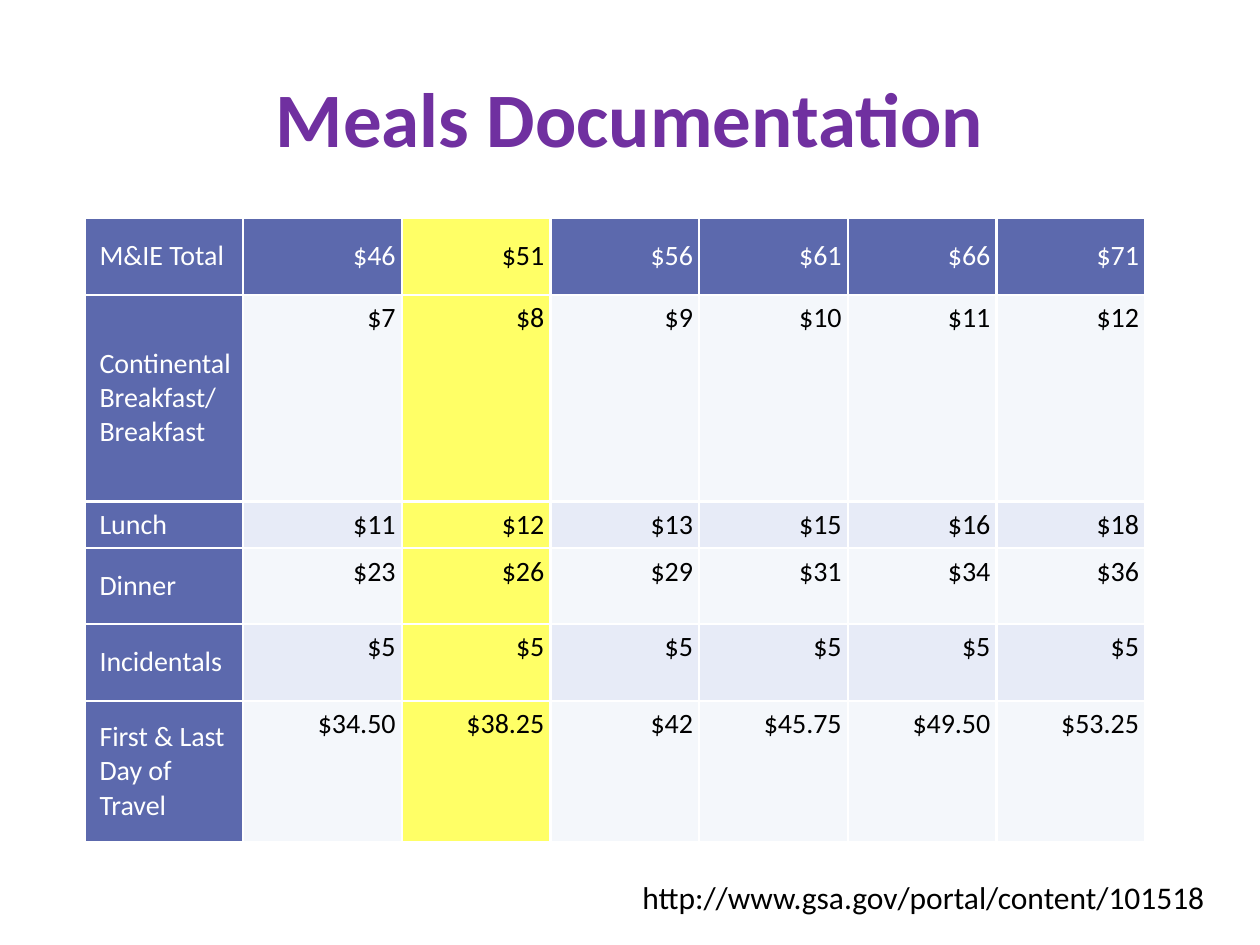
from lxml.etree import SubElement
from pptx import Presentation
from pptx.dml.color import RGBColor
from pptx.enum.text import MSO_ANCHOR, PP_ALIGN
from pptx.oxml.ns import qn
from pptx.util import Inches, Pt

COLORS = {
    "title": "7030A0",
    "header": "5C69AD",
    "highlight": "FFFF66",
    "light_band": "F4F7FB",
    "dark_band": "E7EBF7",
    "white": "FFFFFF",
    "black": "000000",
}
RATES = [
    ("M&IE Total", "$46", "$51", "$56", "$61", "$66", "$71"),
    ("Continental Breakfast/ Breakfast", "$7", "$8", "$9", "$10", "$11", "$12"),
    ("Lunch", "$11", "$12", "$13", "$15", "$16", "$18"),
    ("Dinner", "$23", "$26", "$29", "$31", "$34", "$36"),
    ("Incidentals", "$5", "$5", "$5", "$5", "$5", "$5"),
    ("First & Last Day of Travel", "$34.50", "$38.25", "$42", "$45.75", "$49.50", "$53.25"),
]
COLUMN_WIDTHS = [1.26] * 2 + [1.18] * 5
ROW_HEIGHTS = [0.61, 1.64, 0.36, 0.6, 0.61, 1.12]
HIGHLIGHT_COLUMN = 2


def rgb(name):
    return RGBColor.from_string(COLORS[name])


def format_text(paragraph, size, color, align, bold=False):
    paragraph.alignment = align
    font = paragraph.font
    font.name, font.size, font.bold = "Calibri", Pt(size), bold
    font.color.rgb = rgb(color)


def add_borders(cell, color, width):
    properties = cell._tc.get_or_add_tcPr()
    for position, side in enumerate(("lnL", "lnR", "lnT", "lnB")):
        line = SubElement(properties, qn(f"a:{side}"), w=str(Pt(width)))
        fill = SubElement(line, qn("a:solidFill"))
        SubElement(fill, qn("a:srgbClr"), val=COLORS[color])
        properties.insert(position, line)


def cell_colors(row, column):
    if column == HIGHLIGHT_COLUMN:
        return "highlight", "black"
    if row == 0 or column == 0:
        return "header", "white"
    return ("light_band" if row % 2 else "dark_band"), "black"


def place_title(slide, left, top, width, height):
    title = slide.shapes.title
    title.left, title.top, title.width, title.height = left, top, width, height
    title.text_frame.text = "Meals Documentation"
    title.text_frame.vertical_anchor = MSO_ANCHOR.MIDDLE
    format_text(title.text_frame.paragraphs[0], 44, "title", PP_ALIGN.CENTER, bold=True)


def place_rates(slide, left, top, width, height):
    rates = slide.shapes.add_table(len(RATES), len(RATES[0]), left, top, width, height).table
    for column, column_width in zip(rates.columns, COLUMN_WIDTHS):
        column.width = Inches(column_width)
    for row, row_height in zip(rates.rows, ROW_HEIGHTS):
        row.height = Inches(row_height)
    for r, values in enumerate(RATES):
        for c, value in enumerate(values):
            cell = rates.cell(r, c)
            heading = r == 0 or c == 0
            fill, ink = cell_colors(r, c)
            cell.text = value
            cell.margin_left = Inches(0.12 if heading else 0.09)
            cell.margin_right = cell.margin_top = cell.margin_bottom = Inches(0.05)
            cell.vertical_anchor = MSO_ANCHOR.MIDDLE if heading else MSO_ANCHOR.TOP
            cell.fill.solid()
            cell.fill.fore_color.rgb = rgb(fill)
            align = PP_ALIGN.RIGHT if c else PP_ALIGN.LEFT
            format_text(cell.text_frame.paragraphs[0], 16, ink, align)
            add_borders(cell, "white", 1.5)


def place_source(slide, left, top, width, height):
    source = slide.shapes.add_textbox(left, top, width, height).text_frame
    source.word_wrap = False
    source.text = "http://www.gsa.gov/portal/content/101518"
    format_text(source.paragraphs[0], 18, "black", PP_ALIGN.LEFT)


def main():
    deck = Presentation()
    deck.slide_width, deck.slide_height = Inches(10), Inches(7.5)
    slide = deck.slides.add_slide(deck.slide_layouts[5])
    place_title(slide, Inches(0.5), Inches(0.3), Inches(9), Inches(1.25))
    place_rates(slide, Inches(0.67), Inches(1.73), Inches(8.42), Inches(4.94))
    place_source(slide, Inches(5), Inches(6.92), Inches(4.72), Inches(0.4))
    deck.save("out.pptx")


if __name__ == "__main__":
    main()
